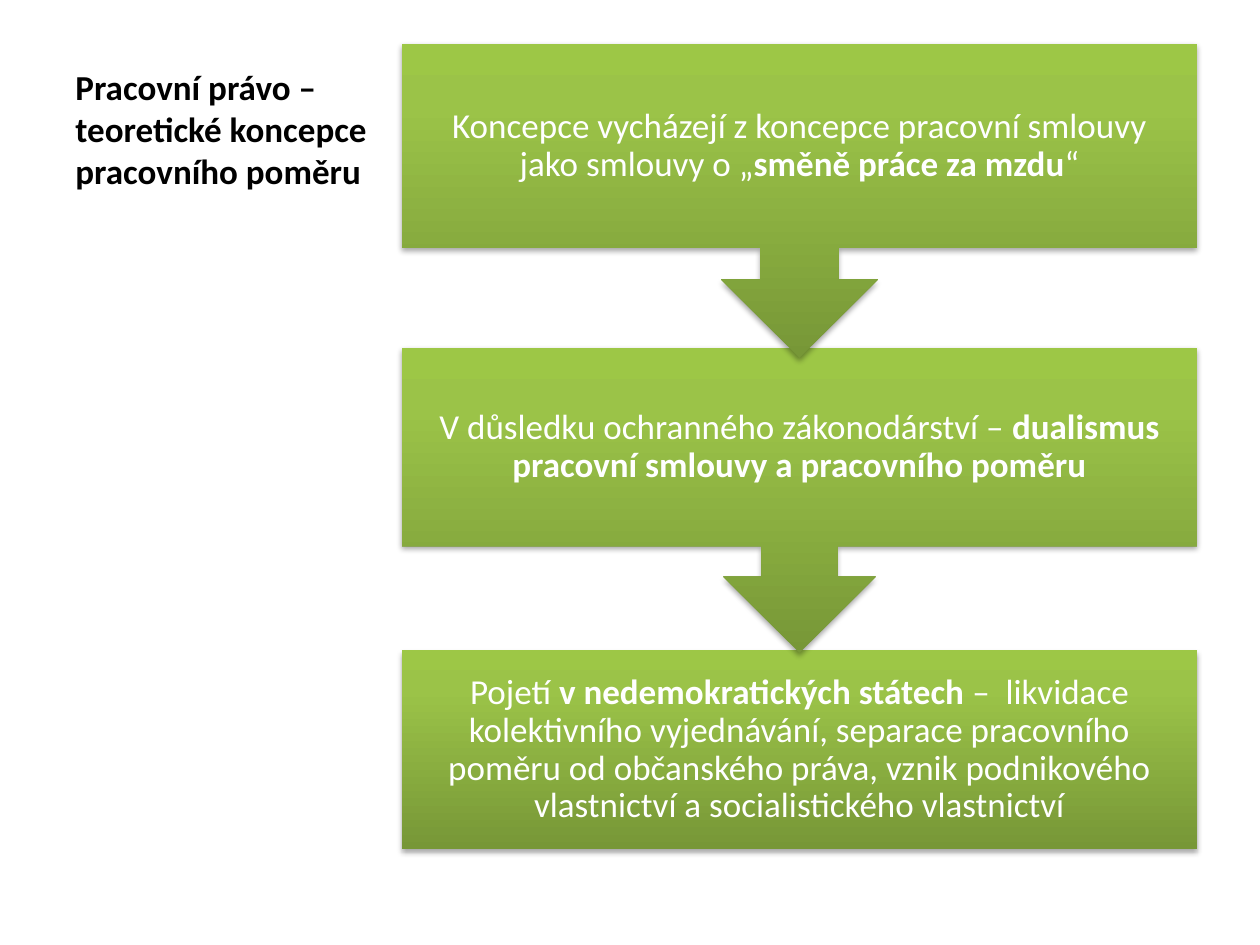
from dataclasses import dataclass

from lxml import etree
from pptx import Presentation
from pptx.dml.color import RGBColor
from pptx.enum import shapes as sh, text as tx
from pptx.oxml import parse_xml
from pptx.oxml.ns import nsdecls, qn
from pptx.util import Pt


@dataclass(frozen=True)
class Theme:
    font: str = "Calibri"
    size: float = 20
    ink: str = "000000"
    white: str = "FFFFFF"
    greens: tuple = ((0, "779737"), (80, "9BC348"), (100, "9DC746"))
    shade: str = "000000"


THEME = Theme()
CALL = sh.MSO_SHAPE.DOWN_ARROW_CALLOUT
RECT = sh.MSO_SHAPE.RECTANGLE

TITLE = [("Pracovní právo – teoretické koncepce pracovního poměru", True)]

# Steps: shape, top, height, runs of (text, bold)
STEPS = [
    (CALL, 25.2, 179.3, [
        ("Koncepce vycházejí z koncepce pracovní smlouvy jako smlouvy o „", False),
        ("směně práce za mzdu", True),
        ("“", False)]),
    (CALL, 198.9, 174.2, [
        ("V důsledku ochranného zákonodárství – ", False),
        ("dualismus pracovní smlouvy a pracovního poměru", True)]),
    (RECT, 371.7, 113.5, [
        ("Pojetí ", False),
        ("v nedemokratických státech ", True),
        ("–  likvidace kolektivního vyjednávání, separace pracovního poměru "
         "od občanského práva, vznik podnikového vlastnictví "
         "a socialistického vlastnictví", False)]),
]


def style(item, form):
    for key, val in form.items():
        setattr(item, key, val)


def write(frame, runs, color, form, para):
    style(frame, {"word_wrap": True, **form})
    line = frame.paragraphs[0]
    style(line, para)
    for words, bold in runs:
        run = line.add_run()
        run.text = words
        style(run.font, {"name": THEME.font, "size": Pt(THEME.size), "bold": bold})
        run.font.color.rgb = RGBColor.from_string(color)


def paint(shape):
    """Green upward gradient, no outline, soft shadow below."""
    shape.line.fill.background()
    stops = "".join(
        f'<a:gs pos="{pos * 1000}"><a:srgbClr val="{hue}"/></a:gs>'
        for pos, hue in THEME.greens)
    grad = parse_xml(
        f'<a:gradFill {nsdecls("a")} rotWithShape="0"><a:gsLst>{stops}</a:gsLst>'
        '<a:lin ang="16200000" scaled="0"/></a:gradFill>')
    props = shape.fill._xPr
    props.find(qn("a:ln")).addprevious(grad)
    shape.shadow.inherit = False
    cast = etree.SubElement(
        props.find(qn("a:effectLst")), qn("a:outerShdw"),
        blurRad=str(Pt(3.1)), dist=str(Pt(1.8)), dir="5400000", rotWithShape="0")
    hue = etree.SubElement(cast, qn("a:srgbClr"), val=THEME.shade)
    etree.SubElement(hue, qn("a:alpha"), val="35000")


def add_title(slide, box):
    frame = slide.shapes.add_textbox(*map(Pt, box)).text_frame
    write(frame, TITLE, THEME.ink,
          {"vertical_anchor": tx.MSO_ANCHOR.BOTTOM},
          {"alignment": tx.PP_ALIGN.LEFT})


def add_flow(slide, box):
    left, top, width = box
    pad = Pt(11.5)
    form = {f"margin_{side}": pad for side in ("left", "top", "right", "bottom")}
    form["vertical_anchor"] = tx.MSO_ANCHOR.MIDDLE
    para = {"alignment": tx.PP_ALIGN.CENTER, "line_spacing": 0.9}
    first = STEPS[0][1]
    # Last step first, so each arrow tip lies over the step below
    for kind, y, high, runs in reversed(STEPS):
        shape = slide.shapes.add_shape(
            kind, Pt(left), Pt(top + y - first), Pt(width), Pt(high))
        paint(shape)
        write(shape.text_frame, runs, THEME.white, form, para)


def main():
    deck = Presentation()
    style(deck, {"slide_width": Pt(720), "slide_height": Pt(540)})
    slide = deck.slides.add_slide(deck.slide_layouts[6])
    add_title(slide, (36, 21.5, 236.9, 91.5))
    add_flow(slide, (229.7, 25.2, 454.3))
    deck.save("out.pptx")


if __name__ == "__main__":
    main()
